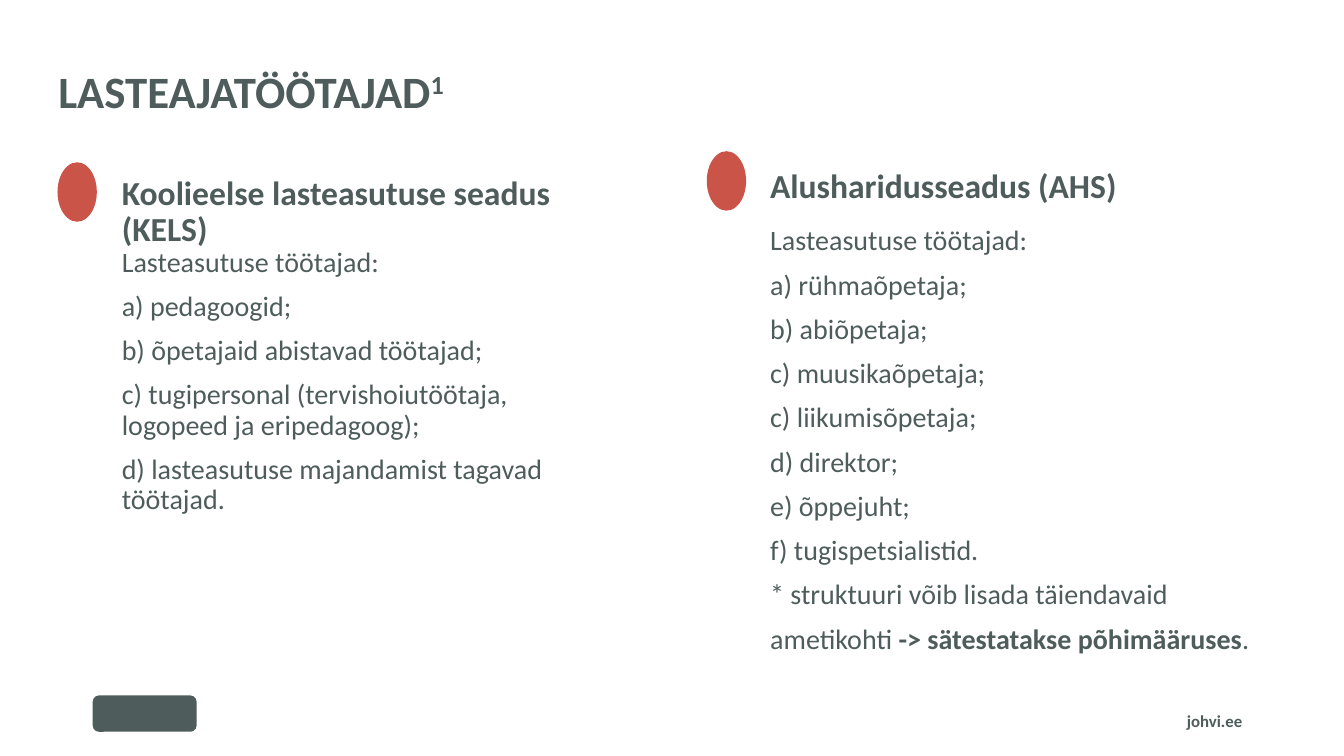
from pptx import Presentation
from pptx.dml.color import RGBColor
from pptx.enum.shapes import MSO_SHAPE
from pptx.enum.text import MSO_ANCHOR, PP_ALIGN
from pptx.util import Inches, Pt

COLORS = {"text": "4E5D5B", "marker": "CA5447", "background": "FFFFFF"}
FONT = "Calibri"
REGULAR, BOLD, SUPERSCRIPT = "regular", "bold", "superscript"

TITLE = [[("LASTEAJATÖÖTAJAD", BOLD), ("1", SUPERSCRIPT)]]
FOOTER = [[("johvi.ee", BOLD)]]
COLUMNS = [
    {
        "heading": "Koolieelse lasteasutuse seadus (KELS)",
        "heading_box": (1.11, 1.7, 5.32, 0.77),
        "body_box": (1.11, 2.41, 5.04, 2.8),
        "marker_box": (0.57, 1.61, 0.39, 0.59),
        "lines": [
            "Lasteasutuse töötajad:",
            "a) pedagoogid;",
            "b) õpetajaid abistavad töötajad;",
            "c) tugipersonal (tervishoiutöötaja, logopeed ja eripedagoog);",
            "d) lasteasutuse majandamist tagavad töötajad.",
        ],
        "closing": [],
    },
    {
        "heading": "Alusharidusseadus (AHS)",
        "heading_box": (7.54, 1.63, 4.36, 0.77),
        "body_box": (7.54, 2.2, 5.55, 4.45),
        "marker_box": (7.01, 1.5, 0.39, 0.59),
        "lines": [
            "Lasteasutuse töötajad:",
            "a) rühmaõpetaja;",
            "b) abiõpetaja;",
            "c) muusikaõpetaja;",
            "c) liikumisõpetaja;",
            "d) direktor;",
            "e) õppejuht;",
            "f) tugispetsialistid.",
            "* struktuuri võib lisada täiendavaid",
        ],
        "closing": [[
            ("ametikohti ", REGULAR),
            ("-> sätestatakse põhimääruses", BOLD),
            (".", REGULAR),
        ]],
    },
]


def add_text(slide, box, paragraphs, size, anchor=MSO_ANCHOR.TOP,
             alignment=PP_ALIGN.LEFT, line_spacing=0.9):
    """Add a text box from paragraphs of (text, style) runs."""
    frame = slide.shapes.add_textbox(*map(Inches, box)).text_frame
    frame.word_wrap = True
    frame.vertical_anchor = anchor
    for index, runs in enumerate(paragraphs):
        paragraph = frame.add_paragraph() if index else frame.paragraphs[0]
        paragraph.alignment = alignment
        paragraph.line_spacing = line_spacing
        paragraph.space_before = Pt(10 if index else 0)
        for text, style in runs:
            run = paragraph.add_run()
            run.text = text
            run.font.name = FONT
            run.font.size = Pt(size)
            run.font.bold = style != REGULAR
            run.font.color.rgb = RGBColor.from_string(COLORS["text"])
            if style == SUPERSCRIPT:
                run.font._element.set("baseline", "30000")


def add_plain_shape(slide, preset, box, color):
    """Add a filled shape without outline or shadow."""
    shape = slide.shapes.add_shape(preset, *map(Inches, box))
    shape.shadow.inherit = False
    shape.fill.solid()
    shape.fill.fore_color.rgb = RGBColor.from_string(COLORS[color])
    shape.line.fill.background()


def main():
    """Build and save the slide."""
    presentation = Presentation()
    presentation.slide_width = Inches(13.33)
    presentation.slide_height = Inches(7.5)
    slide = presentation.slides.add_slide(presentation.slide_layouts[6])
    slide.background.fill.solid()
    slide.background.fill.fore_color.rgb = RGBColor.from_string(COLORS["background"])

    add_plain_shape(slide, MSO_SHAPE.ROUNDED_RECTANGLE, (0.92, 6.9, 1.03, 0.36), "text")
    add_text(slide, (0.48, 0.45, 11.7, 0.77), TITLE, 32, MSO_ANCHOR.BOTTOM)
    for column in COLUMNS:
        body = [[(line, REGULAR)] for line in column["lines"]] + column["closing"]
        add_text(slide, column["heading_box"], [[(column["heading"], BOLD)]], 24)
        add_text(slide, column["body_box"], body, 20)
        add_plain_shape(slide, MSO_SHAPE.OVAL, column["marker_box"], "marker")
    add_text(slide, (7.92, 6.95, 4.5, 0.4), FOOTER, 12, MSO_ANCHOR.MIDDLE,
             PP_ALIGN.RIGHT, 1.0)
    presentation.save("out.pptx")


if __name__ == "__main__":
    main()
